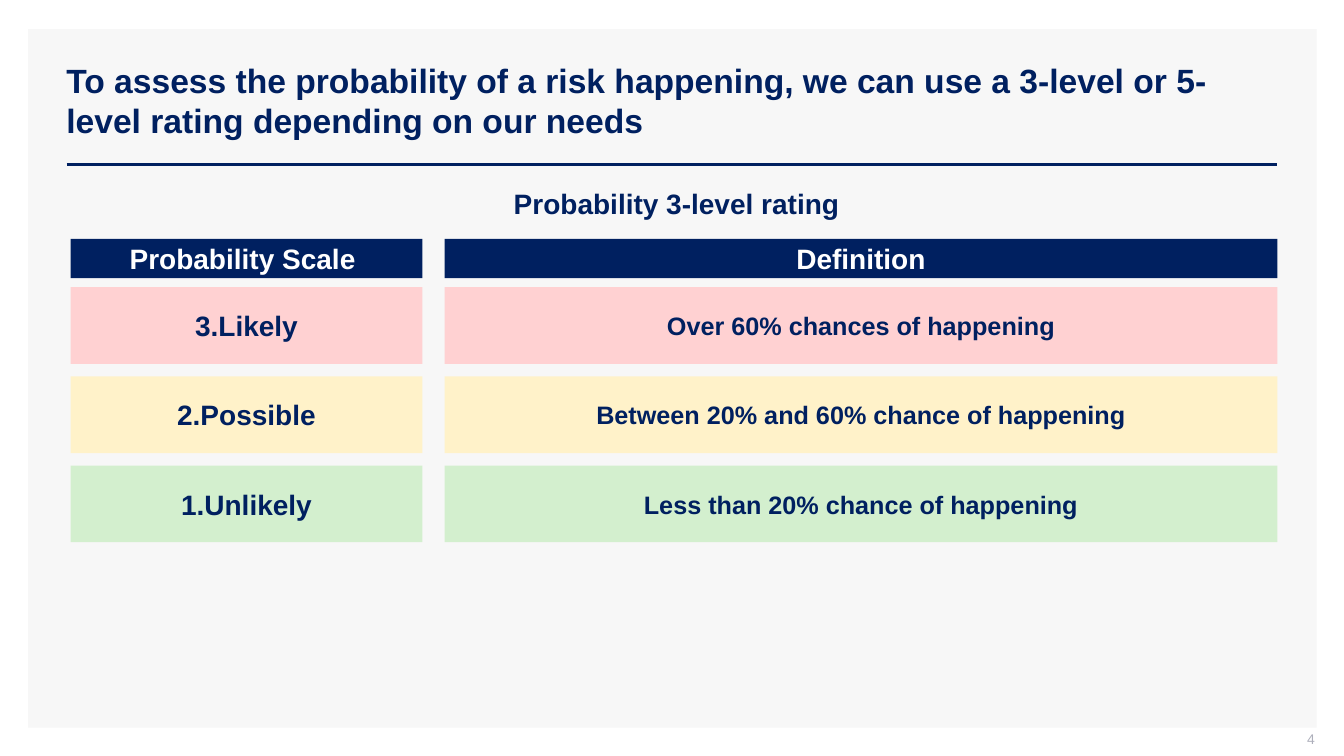
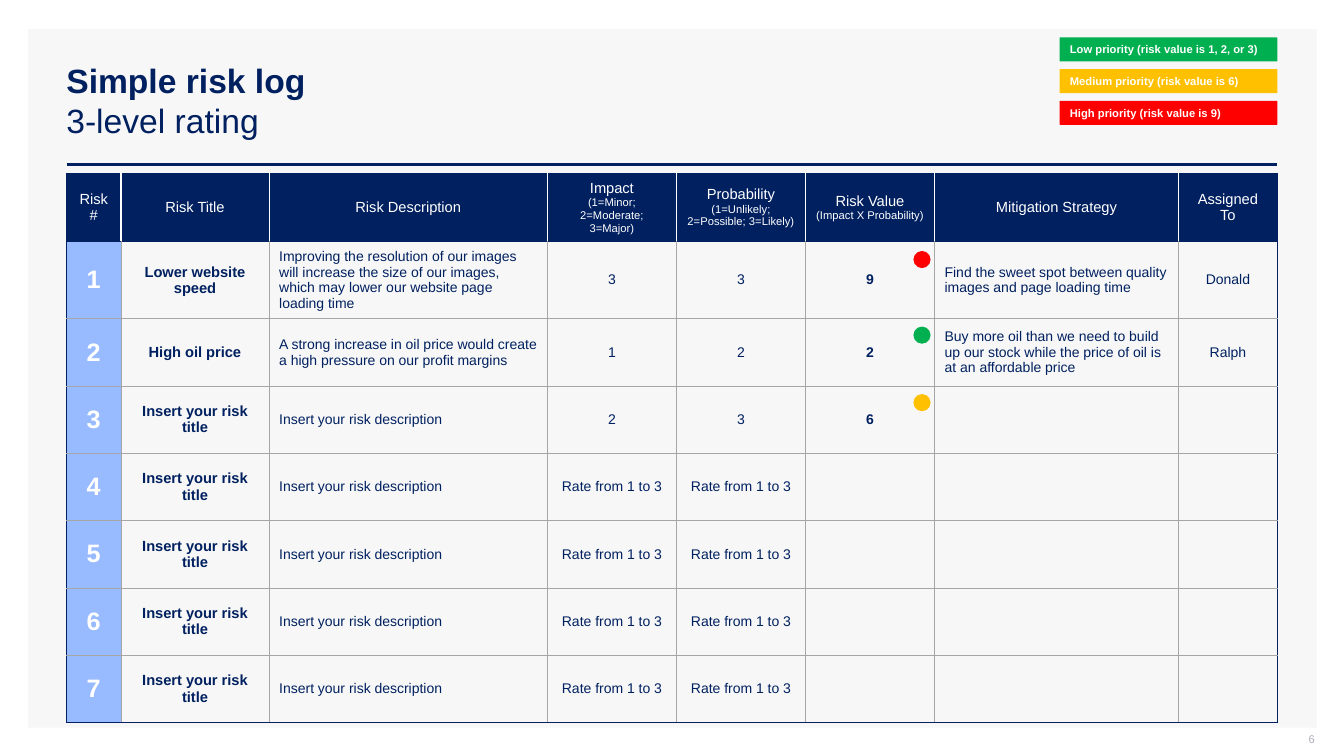
from dataclasses import dataclass
from typing import NamedTuple

from lxml.etree import SubElement
from pptx import Presentation
from pptx.dml.color import RGBColor
from pptx.enum.shapes import MSO_CONNECTOR, MSO_SHAPE as Shape
from pptx.enum.text import MSO_ANCHOR as Anchor, PP_ALIGN as Align
from pptx.oxml.ns import qn
from pptx.util import Inches, Pt


@dataclass(frozen=True)
class Theme:
    font: str = "Arial"
    navy: str = "002060"
    white: str = "FFFFFF"
    panel: str = "F7F7F7"
    page_number: str = "ADAFBB"
    grid: str = "A6A6A6"
    number_fill: str = "98BAFF"
    pale_red: str = "FFD1D2"
    pale_yellow: str = "FFF2C9"
    pale_green: str = "D3EFCE"
    red: str = "FF0000"
    amber: str = "FFC000"
    green: str = "00B050"
    title: float = 24
    heading: float = 20
    definition: float = 18
    table_head: float = 10.5
    table_body: float = 10
    small: float = 8


THEME = Theme()


class Box(NamedTuple):
    left: float
    top: float
    width: float
    height: float

    def lengths(self) -> list:
        return [Inches(value) for value in self]


class Level(NamedTuple):
    name: str
    definition: str
    fill: str


class Priority(NamedTuple):
    label: str
    fill: str


class Column(NamedTuple):
    heading: str
    note: str
    width: float
    size: float = THEME.table_body
    bold: bool = False
    align: Align = Align.CENTER
    color: str = THEME.navy
    fill: str = ""


class Dot(NamedTuple):
    top: float
    fill: str


LEVELS = [
    Level("3.Likely", "Over 60% chances of happening", THEME.pale_red),
    Level("2.Possible", "Between 20% and 60% chance of happening", THEME.pale_yellow),
    Level("1.Unlikely", "Less than 20% chance of happening", THEME.pale_green),
]
PRIORITIES = [
    Priority("Low priority (risk value is 1, 2, or 3)", THEME.green),
    Priority("Medium priority (risk value is 6)", THEME.amber),
    Priority("High priority (risk value is 9)", THEME.red),
]
COLUMNS = [
    Column("Risk #", "", 0.54, 18, True, color=THEME.white, fill=THEME.number_fill),
    Column("Risk Title", "", 1.47, 10.5, True),
    Column("Risk Description", "", 2.76, align=Align.LEFT),
    Column("Impact", "(1=Minor; 2=Moderate; 3=Major)", 1.28),
    Column("Probability", "(1=Unlikely; 2=Possible; 3=Likely)", 1.28),
    Column("Risk Value", "(Impact X Probability)", 1.28, bold=True),
    Column("Mitigation Strategy", "", 2.42, align=Align.LEFT),
    Column("Assigned To", "", 0.98),
]
NEW_TITLE, NEW_DESCRIPTION = "Insert your risk title", "Insert your risk description"
RATE = "Rate from 1 to 3"
RISKS = [
    ("Lower website speed",
     "Improving the resolution of our images will increase the size of our images, "
     "which may lower our website page loading time",
     "3", "3", "9",
     "Find the sweet spot between quality images and page loading time", "Donald"),
    ("High oil price",
     "A strong increase in oil price would create a high pressure on our profit margins",
     "1", "2", "2",
     "Buy more oil than we need to build up our stock while the price of oil is "
     "at an affordable price", "Ralph"),
    (NEW_TITLE, NEW_DESCRIPTION, "2", "3", "6", "", ""),
] + [(NEW_TITLE, NEW_DESCRIPTION, RATE, RATE, "", "", "")] * 4
DOTS = [Dot(2.49, THEME.red), Dot(3.24, THEME.green), Dot(3.91, THEME.amber)]


# Text and shape helpers
def rgb(color: str) -> RGBColor:
    return RGBColor.from_string(color)


def style_paragraph(paragraph, size: float, color: str, bold: bool, align: Align) -> None:
    paragraph.alignment = align
    for run in paragraph.runs:
        run.font.name = THEME.font
        run.font.size = Pt(size)
        run.font.bold = bold
        run.font.color.rgb = rgb(color)


def write(frame, text: str, size: float, color: str = THEME.navy,
          bold: bool = True, align: Align = Align.CENTER) -> None:
    frame.word_wrap = True
    frame.vertical_anchor = Anchor.MIDDLE
    frame.text = text
    for paragraph in frame.paragraphs:
        style_paragraph(paragraph, size, color, bold, align)


def add_text(slide, box: Box, text: str, size: float, **style):
    frame = slide.shapes.add_textbox(*box.lengths()).text_frame
    write(frame, text, size, **style)
    return frame


def add_block(slide, box: Box, fill: str, kind: Shape = Shape.RECTANGLE):
    block = slide.shapes.add_shape(kind, *box.lengths())
    block.shadow.inherit = False
    block.fill.solid()
    block.fill.fore_color.rgb = rgb(fill)
    block.line.fill.background()
    return block


# Shared frame: panel, title, rule and page number
def add_slide(deck, title: str, number: str, title_width: float, number_size: float):
    slide = deck.slides.add_slide(deck.slide_layouts[6])
    add_block(slide, Box(0.28, 0.29, 12.78, 6.93), THEME.panel)
    rule = slide.shapes.add_connector(
        MSO_CONNECTOR.STRAIGHT, Inches(0.66), Inches(1.63), Inches(12.67), Inches(1.63))
    rule.line.color.rgb = rgb(THEME.navy)
    rule.line.width = Pt(2)
    SubElement(rule.line._get_or_add_ln().getparent(), qn("a:effectLst"))
    heading = add_text(slide, Box(0.56, 0.4, title_width, 1.19), title, THEME.title,
                       align=Align.LEFT)
    for subtitle in heading.paragraphs[0].runs[1:]:
        subtitle.font.bold = False
    page = add_text(slide, Box(10.04, 7.25, 3, 0.21), number, number_size,
                    color=THEME.page_number, bold=False, align=Align.RIGHT)
    page.margin_top = page.margin_right = 0
    return slide


# Slide: probability scale
def add_probability_slide(deck) -> None:
    slide = add_slide(
        deck, "To assess the probability of a risk happening, we can use a 3-level "
        "or 5-level rating depending on our needs", "4", 11.75, 10)
    add_text(slide, Box(3.65, 1.8, 6.2, 0.44), "Probability 3-level rating ", THEME.heading)

    def add_row(top: float, height: float, texts: tuple, fill: str, color: str,
                definition_size: float) -> None:
        spans = [(0.7, 3.49, THEME.heading), (4.41, 8.26, definition_size)]
        for text, (left, width, size) in zip(texts, spans):
            block = add_block(slide, Box(left, top, width, height), fill)
            write(block.text_frame, text, size, color)

    add_row(2.37, 0.39, ("Probability Scale ", "Definition"), THEME.navy, THEME.white,
            THEME.heading)
    for index, level in enumerate(LEVELS):
        add_row(2.85 + index * 0.885, 0.76, (level.name, level.definition), level.fill,
                THEME.navy, THEME.definition)


# Risk table
def set_border(cell, side: str, color: str, width: float) -> None:
    line = SubElement(cell._tc.get_or_add_tcPr(), qn(f"a:ln{side}"), w=str(Pt(width)))
    SubElement(SubElement(line, qn("a:solidFill")), qn("a:srgbClr"), val=color)


def frame_cell(cell, row: int, column: int) -> None:
    outer = (THEME.navy, 1)
    inner = (THEME.grid, 0.5)
    between = (THEME.white, 1) if row == 0 else inner
    set_border(cell, "L", *(outer if column == 0 else between))
    set_border(cell, "R", *(outer if column == len(COLUMNS) - 1 else between))
    set_border(cell, "T", *(outer if row <= 1 else inner))
    set_border(cell, "B", *(outer if row in (0, len(RISKS)) else inner))


def fill_cell(cell, fill: str) -> None:
    if fill:
        cell.fill.solid()
        cell.fill.fore_color.rgb = rgb(fill)
    else:
        cell.fill.background()


def add_risk_table(slide) -> None:
    table = slide.shapes.add_table(
        len(RISKS) + 1, len(COLUMNS), *Box(0.66, 1.72, 12.01, 5.34).lengths()).table
    table.first_row = table.horz_banding = False
    for index, column in enumerate(COLUMNS):
        table.columns[index].width = Inches(column.width)
        entries = [column.heading]
        entries += [(str(row), *risk)[index] for row, risk in enumerate(RISKS, 1)]
        for row, entry in enumerate(entries):
            cell = table.cell(row, index)
            cell.vertical_anchor = Anchor.MIDDLE
            frame_cell(cell, row, index)
            fill_cell(cell, column.fill if row else THEME.navy)
            if not entry:
                continue
            cell.text_frame.text = entry
            first = cell.text_frame.paragraphs[0]
            if row:
                style_paragraph(first, column.size, column.color, column.bold, column.align)
                continue
            style_paragraph(first, THEME.table_head, THEME.white, False, Align.CENTER)
            if column.note:
                note = cell.text_frame.add_paragraph()
                note.text = column.note
                style_paragraph(note, THEME.small, THEME.white, False, Align.CENTER)


# Slide: risk log
def add_risk_log_slide(deck) -> None:
    slide = add_slide(deck, "Simple risk log\v3-level rating", "6", 12.11, THEME.small)
    add_risk_table(slide)
    for index, priority in enumerate(PRIORITIES):
        tag = add_block(slide, Box(10.51, 0.37 + index * 0.315, 2.16, 0.24),
                        priority.fill, Shape.ROUNDED_RECTANGLE)
        tag.adjustments[0] = 0.04
        write(tag.text_frame, priority.label, THEME.small, THEME.white, align=Align.LEFT)
    for dot in DOTS:
        add_block(slide, Box(9.06, dot.top, 0.17, 0.17), dot.fill, Shape.OVAL)


def main() -> None:
    deck = Presentation()
    deck.slide_width, deck.slide_height = Inches(13.33), Inches(7.5)
    add_probability_slide(deck)
    add_risk_log_slide(deck)
    deck.save("out.pptx")


if __name__ == "__main__":
    main()
